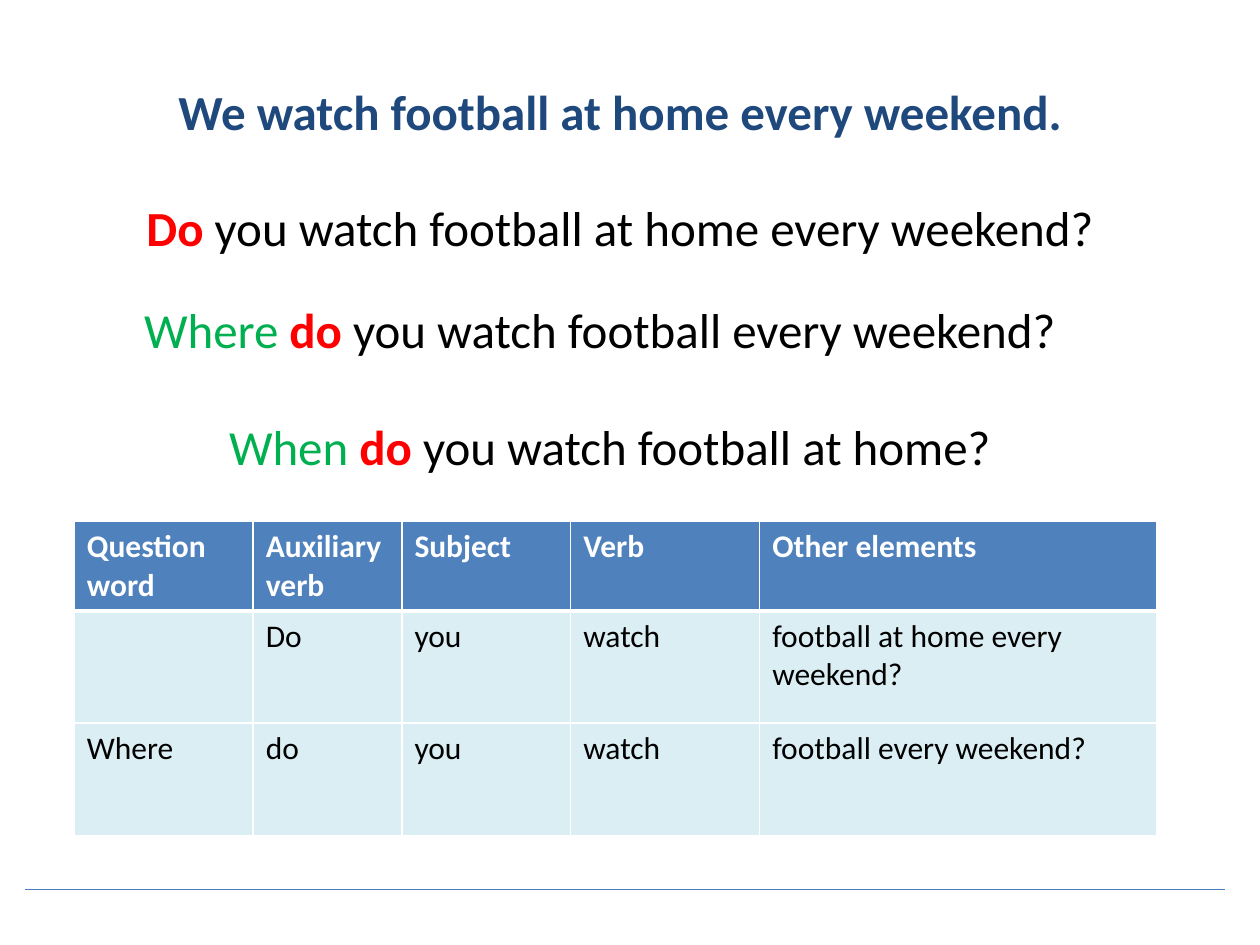
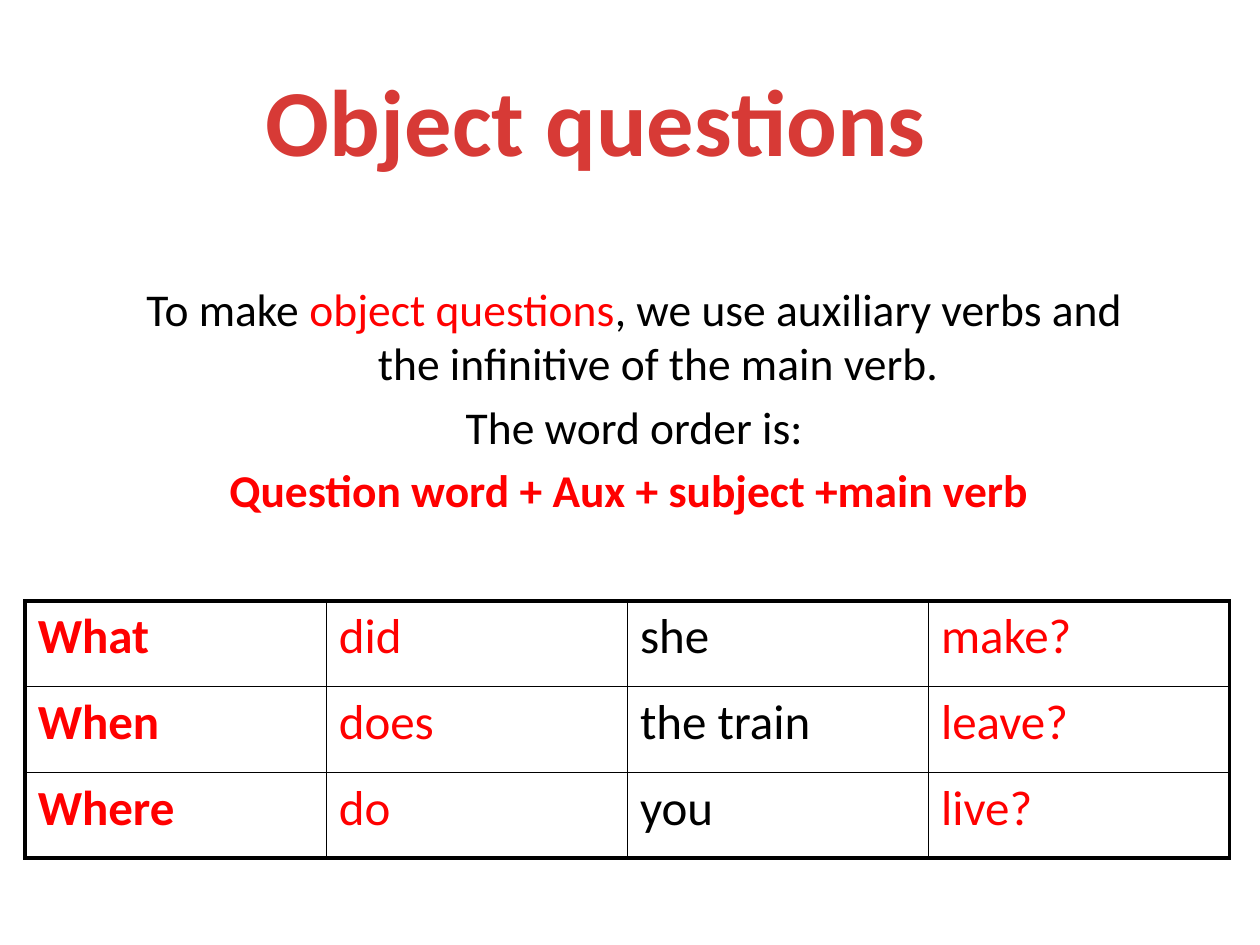
"""Builds two grammar slides about forming object questions."""
from dataclasses import dataclass
from typing import NamedTuple

from lxml.etree import SubElement
from pptx import Presentation
from pptx.dml.color import RGBColor
from pptx.enum.shapes import MSO_CONNECTOR
from pptx.enum.text import MSO_ANCHOR, MSO_AUTO_SIZE, PP_ALIGN
from pptx.oxml.ns import qn
from pptx.util import Inches, Pt


@dataclass(frozen=True)
class Theme:
    """Colours and type sizes shared by the slides."""
    font: str = "Calibri"
    black: str = "000000"
    white: str = "FFFFFF"
    red: str = "FF0000"
    green: str = "00B050"
    navy: str = "1F497D"
    title_red: str = "D73A36"
    header_fill: str = "4F81BD"
    body_fill: str = "DBEEF4"
    rule: str = "4B7EBC"
    heading_size: float = 54
    sentence_size: float = 28
    body_size: float = 26
    grid_size: float = 18
    thin: float = 1
    outer: float = 2.25
    header_line: float = 3


THEME = Theme()


class Span(NamedTuple):
    """A stretch of text in one colour and weight."""
    text: str
    color: str = THEME.black
    bold: bool = False


class Area(NamedTuple):
    """A rectangle in inches."""
    left: float
    top: float
    width: float
    height: float


class Sentence(NamedTuple):
    """A centred example sentence."""
    area: Area
    spans: list[Span]


class Cell(NamedTuple):
    """A table cell with border widths in points."""
    span: Span
    fill: str | None
    left: float
    right: float
    top: float
    bottom: float


SENTENCES = [
    Sentence(Area(0.59, 1.52, 8.66, 0.57),
             [Span("Do", THEME.red, True), Span(" you watch football at home every weekend?")]),
    Sentence(Area(0.43, 2.33, 8.66, 0.57),
             [Span("Where ", THEME.green), Span("do", THEME.red, True),
              Span(" you watch football every weekend?")]),
    Sentence(Area(0.51, 3.26, 8.66, 0.57),
             [Span("When ", THEME.green), Span("do", THEME.red, True),
              Span(" you watch football at home?")]),
]
WORD_ORDER = [
    ["Question word", "Auxiliary verb", "Subject", "Verb", "Other elements"],
    ["", "Do", "you", "watch", "football at home every weekend?"],
    ["Where", "do", "you", "watch", "football every weekend?"],
]
RULES = [
    [Span("To make "), Span("object questions", THEME.red),
     Span(", we use auxiliary verbs and the infinitive of the main verb.")],
    [Span("The word order is:")],
    [Span("Question word + Aux + subject +main verb ", THEME.red, True)],
]
EXAMPLES = [
    ["What", "did", "she", "make?"],
    ["When", "does", "the train", "leave?"],
    ["Where", "do", "you", "live?"],
]


def place(shape, area: Area) -> None:
    """Moves and sizes a shape."""
    shape.left, shape.top, shape.width, shape.height = map(Inches, area)


def write(para, spans: list[Span], size: float) -> None:
    """Adds formatted runs to a paragraph."""
    for span in spans:
        run = para.add_run()
        run.text = span.text
        run.font.name = THEME.font
        run.font.size = Pt(size)
        run.font.bold = span.bold
        run.font.color.rgb = RGBColor.from_string(span.color)


def add_page(deck, title: Span, area: Area, size: float):
    """Adds a slide and formats its title."""
    page = deck.slides.add_slide(deck.slide_layouts[5])
    place(page.shapes.title, area)
    frame = page.shapes.title.text_frame
    frame.word_wrap = True
    frame.auto_size = MSO_AUTO_SIZE.NONE
    frame.vertical_anchor = MSO_ANCHOR.TOP
    frame.paragraphs[0].alignment = PP_ALIGN.CENTER
    write(frame.paragraphs[0], [title], size)
    return page


def add_text(page, area: Area, lines: list[list[Span]], size: float,
             hanging: float = 0, gap: float = 0) -> None:
    """Adds a centred text box with one paragraph per line."""
    frame = page.shapes.add_textbox(*map(Inches, area)).text_frame
    frame.word_wrap = True
    for index, spans in enumerate(lines):
        para = frame.add_paragraph() if index else frame.paragraphs[0]
        para.alignment = PP_ALIGN.CENTER
        para.space_before = Pt(gap if index else 0)
        if hanging:
            properties = para._p.get_or_add_pPr()
            properties.set("marL", str(Inches(hanging)))
            properties.set("indent", str(-Inches(hanging)))
        write(para, spans, size)


def add_border(cell, side: str, width: float, color: str) -> None:
    """Draws one side of a table cell."""
    line = SubElement(cell._tc.get_or_add_tcPr(), qn(f"a:ln{side}"), w=str(Pt(width)))
    SubElement(SubElement(line, qn("a:solidFill")), qn("a:srgbClr"), val=color)


def add_grid(page, area: Area, columns: list[float], heights: list[float],
             rows: list[list[Cell]], size: float, border: str) -> None:
    """Adds a table from described cells."""
    table = page.shapes.add_table(len(rows), len(columns), *map(Inches, area)).table
    table.first_row = table.horz_banding = False
    for column, width in zip(table.columns, columns):
        column.width = Inches(width)
    for row, height, cells in zip(table.rows, heights, rows):
        row.height = Inches(height)
        for cell, plan in zip(row.cells, cells):
            for side, width in zip("LRTB", (plan.left, plan.right, plan.top, plan.bottom)):
                add_border(cell, side, width, border)
            if plan.fill:
                cell.fill.solid()
                cell.fill.fore_color.rgb = RGBColor.from_string(plan.fill)
            else:
                cell.fill.background()
            if plan.span.text:
                write(cell.text_frame.paragraphs[0], [plan.span], size)


def add_rule(page, left: float, right: float, top: float) -> None:
    """Draws the thin line at the foot of a slide."""
    line = page.shapes.add_connector(
        MSO_CONNECTOR.STRAIGHT, Inches(left), Inches(top), Inches(right), Inches(top))
    line.line.color.rgb = RGBColor.from_string(THEME.rule)
    line.line.width = Pt(0.75)
    SubElement(line._element.spPr, qn("a:effectLst"))


def word_order_cell(text: str, row: int) -> Cell:
    """Describes a cell under the blue header row."""
    header = row == 0
    span = Span(text, THEME.white if header else THEME.black, header)
    return Cell(span, THEME.header_fill if header else THEME.body_fill,
                THEME.thin, THEME.thin,
                THEME.header_line if row == 1 else THEME.thin,
                THEME.header_line if header else THEME.thin)


def example_cell(text: str, row: int, column: int) -> Cell:
    """Describes an example cell, with heavy lines on the outside."""
    last_row, last_column = len(EXAMPLES) - 1, len(EXAMPLES[0]) - 1
    span = Span(text, THEME.black if column == 2 else THEME.red, column == 0)
    edges = (column == 0, column == last_column, row == 0, row == last_row)
    return Cell(span, None, *(THEME.outer if edge else THEME.thin for edge in edges))


def build_sentence_page(deck) -> None:
    """Builds the slide that turns a sentence into questions."""
    page = add_page(deck, Span("We watch football at home every weekend.", THEME.navy, True),
                    Area(0.59, 0.6, 8.66, 0.57), THEME.sentence_size)
    for sentence in SENTENCES:
        add_text(page, sentence.area, [sentence.spans], THEME.sentence_size)
    rows = [[word_order_cell(text, row) for text in texts]
            for row, texts in enumerate(WORD_ORDER)]
    add_grid(page, Area(0.59, 4.14, 8.58, 2.49), [1.42, 1.18, 1.34, 1.5, 3.15],
             [0.71, 0.89, 0.89], rows, THEME.grid_size, THEME.white)
    add_rule(page, 0.2, 9.72, 7.06)


def build_object_page(deck) -> None:
    """Builds the slide that explains object questions."""
    page = add_page(deck, Span("Object questions", THEME.title_red, True),
                    Area(1.98, 0.44, 5.5, 1.01), THEME.heading_size)
    add_text(page, Area(1.06, 2.18, 7.95, 2.03), RULES, THEME.body_size, hanging=0.38, gap=5)
    rows = [[example_cell(text, row, column) for column, text in enumerate(texts)]
            for row, texts in enumerate(EXAMPLES)]
    add_grid(page, Area(0.2, 4.77, 9.55, 2.05), [2.39] * 4, [0.68] * 3,
             rows, THEME.sentence_size, THEME.black)


def main() -> None:
    """Builds and saves the deck."""
    deck = Presentation()
    deck.slide_width, deck.slide_height = Inches(10), Inches(7.5)
    build_sentence_page(deck)
    build_object_page(deck)
    deck.save("out.pptx")


if __name__ == "__main__":
    main()
